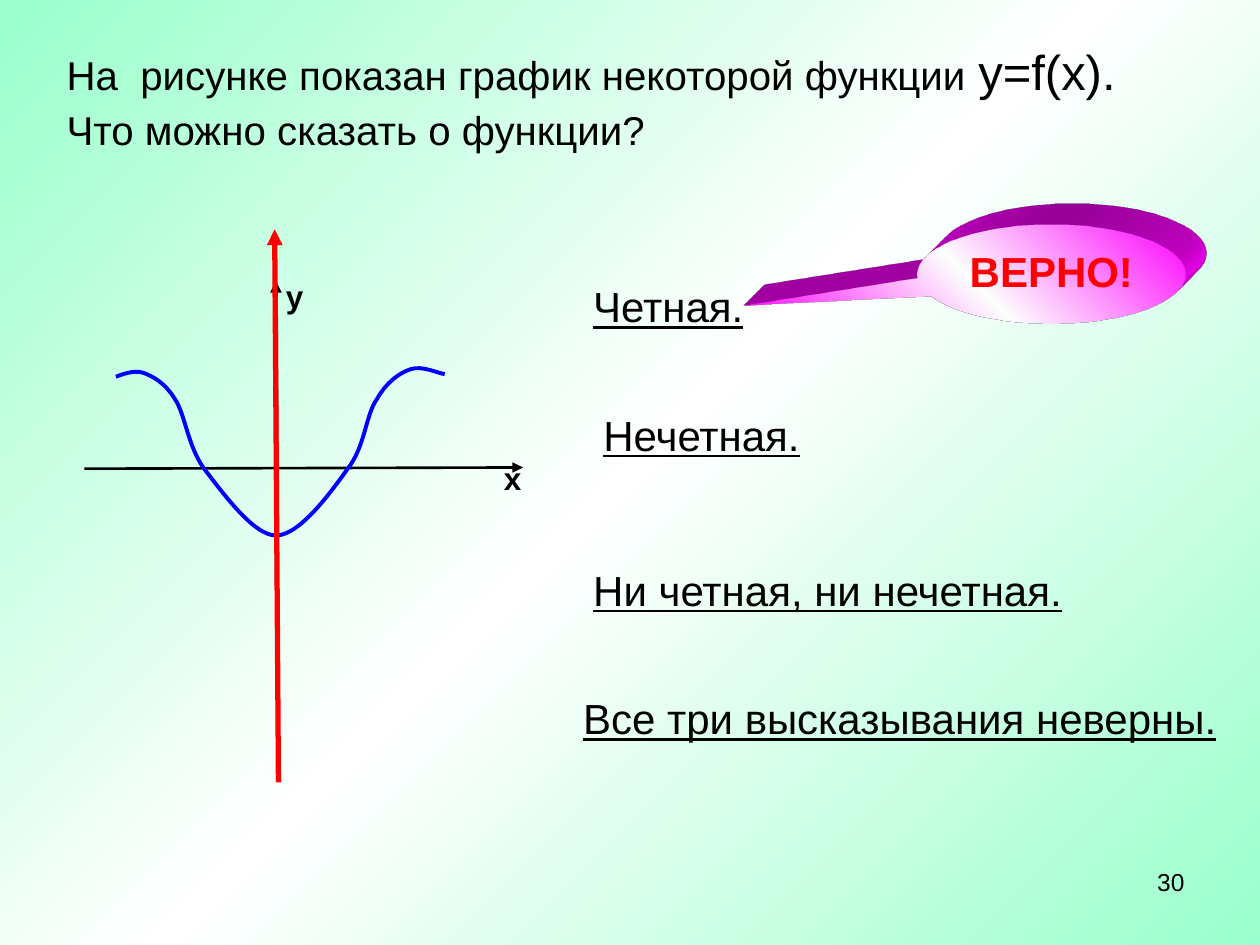
"""Build a quiz slide about an even function with its graph and four answers."""
from lxml import etree
from pptx import Presentation
from pptx.dml.color import RGBColor
from pptx.enum.shapes import MSO_CONNECTOR as Connector, MSO_SHAPE as Shape
from pptx.enum.text import MSO_ANCHOR as Anchor, MSO_AUTO_SIZE as AutoSize, PP_ALIGN as Align
from pptx.oxml import parse_xml
from pptx.oxml.ns import nsdecls, qn
from pptx.util import Inches, Pt

BLACK, RED, BLUE = "000000", "FF0000", "0000FF"
MINT, MAGENTA, WHITE = "99FFCC", "FF00FF", "FFFFFF"

QUESTION = [
    [("На  рисунке показан график некоторой функции ", 23), ("y=f(x).", 28), (" ", 23)],
    [("Что можно сказать о функции? ", 23), (" ", 26)],
]
ANSWERS = [
    ("Четная.", 4.61, 2.18, 1.4),
    ("Нечетная.", 4.69, 3.2, 1.78),
    ("Ни четная, ни нечетная.", 4.61, 4.43, 3.95),
    ("Все три высказывания неверны.", 4.53, 5.45, 5.23),
]
AXIS_LABELS = [("х", 3.9, 3.59), ("у", 2.17, 2.15)]
AXES = [((0.67, 3.72), (4.15, 3.71), BLACK, 1.5), ((2.2, 5.21), (2.19, 2.23), BLACK, 2.25)]
SYMMETRY_AXIS = ((2.21, 6.21), (2.18, 1.82), RED, 3)
CURVE_START = (0.92, 2.99)
CURVE = [
    ((0.95, 2.98), (1.06, 2.93), (1.14, 2.96)),
    ((1.22, 2.99), (1.31, 3.04), (1.39, 3.17)),
    ((1.47, 3.29), (1.49, 3.54), (1.62, 3.72)),
    ((1.76, 3.9), (2.01, 4.25), (2.19, 4.25)),
    ((2.38, 4.25), (2.63, 3.9), (2.76, 3.72)),
    ((2.9, 3.54), (2.9, 3.3), (2.99, 3.17)),
    ((3.07, 3.03), (3.17, 2.96), (3.26, 2.93)),
    ((3.35, 2.9), (3.47, 2.96), (3.53, 2.97)),
]


def color(value):
    return RGBColor.from_string(value)


def set_gradient(fill, properties, edge, angle):
    fill.solid()
    stops = "".join(
        f'<a:gs pos="{position * 1000}"><a:srgbClr val="{value}"/></a:gs>'
        for position, value in ((0, edge), (50, WHITE), (100, edge))
    )
    gradient = parse_xml(
        f'<a:gradFill {nsdecls("a")} rotWithShape="1"><a:gsLst>{stops}</a:gsLst>'
        f'<a:lin ang="{angle * 60000}" scaled="1"/></a:gradFill>'
    )
    properties.replace(properties.find(qn("a:solidFill")), gradient)


def add_run(paragraph, text, size, value=BLACK, bold=False, underline=False):
    run = paragraph.add_run()
    run.text = text
    font = run.font
    font.name, font.size, font.bold, font.underline = "Arial", Pt(size), bold, underline
    font.color.rgb = color(value)


def add_text(slide, box, paragraphs, wrap=False, align=Align.LEFT, **style):
    frame = slide.shapes.add_textbox(*map(Inches, box)).text_frame
    frame.word_wrap = wrap
    frame.auto_size = AutoSize.NONE if align == Align.RIGHT else AutoSize.SHAPE_TO_FIT_TEXT
    for index, runs in enumerate(paragraphs):
        paragraph = frame.add_paragraph() if index else frame.paragraphs[0]
        paragraph.alignment = align
        for text, size in runs:
            add_run(paragraph, text, size, **style)


def add_arrow(slide, start, end, value, width):
    arrow = slide.shapes.add_connector(Connector.STRAIGHT, *map(Inches, start + end))
    arrow.line.color.rgb = color(value)
    arrow.line.width = Pt(width)
    etree.SubElement(arrow.line._get_or_add_ln(), qn("a:tailEnd"), type="triangle")
    etree.SubElement(arrow._element.spPr, qn("a:effectLst"))


def add_curve(slide):
    builder = slide.shapes.build_freeform(*map(Inches, CURVE_START))
    points = [tuple(map(Inches, point)) for segment in CURVE for point in segment]
    builder.add_line_segments(points, close=False)
    curve = builder.convert_to_shape()
    outline = next(curve._element.iter(qn("a:path")))
    lines = outline.findall(qn("a:lnTo"))
    for first in range(0, len(lines), 3):
        bezier = etree.SubElement(outline, qn("a:cubicBezTo"))
        for line in lines[first:first + 3]:
            bezier.append(line[0])
            outline.remove(line)
    curve.fill.background()
    curve.line.color.rgb = color(BLUE)
    curve.line.width = Pt(2.25)
    curve.shadow.inherit = False


def add_callout(slide):
    box = map(Inches, (7.28, 1.78, 2.13, 0.79))
    callout = slide.shapes.add_shape(Shape.OVAL_CALLOUT, *box)
    callout.adjustments[0], callout.adjustments[1] = -1.147, 0.314
    properties = callout._element.spPr
    set_gradient(callout.fill, properties, MAGENTA, 315)
    callout.line.fill.background()
    callout.shadow.inherit = False
    properties.append(parse_xml(
        f'<a:scene3d {nsdecls("a")}><a:camera prst="legacyObliqueTopRight"/>'
        '<a:lightRig rig="legacyFlat3" dir="b"/></a:scene3d>'
    ))
    properties.append(parse_xml(
        f'<a:sp3d {nsdecls("a")} extrusionH="430200" prstMaterial="legacyMatte">'
        '<a:bevelT w="13500" h="13500" prst="angle"/><a:bevelB w="13500" h="13500" prst="angle"/>'
        f'<a:extrusionClr><a:srgbClr val="{MAGENTA}"/></a:extrusionClr></a:sp3d>'
    ))
    frame = callout.text_frame
    frame.word_wrap = True
    frame.vertical_anchor = Anchor.TOP
    frame.paragraphs[0].alignment = Align.CENTER
    add_run(frame.paragraphs[0], "ВЕРНО!", 24, RED, bold=True)


def main():
    presentation = Presentation()
    presentation.slide_width, presentation.slide_height = Inches(10), Inches(7.5)
    slide = presentation.slides.add_slide(presentation.slide_layouts[6])
    background = slide.background.fill
    background.solid()
    set_gradient(background, next(slide._element.iter(qn("p:bgPr"))), MINT, 45)

    for axis in AXES:
        add_arrow(slide, *axis)
    for text, left, top in AXIS_LABELS:
        add_text(slide, (left, top, 0.34, 0.4), [[(text, 18)]], bold=True)
    add_text(slide, (0.43, 0.28, 9.33, 1), QUESTION, wrap=True)
    for text, left, top, width in ANSWERS:
        add_text(slide, (left, top, width, 0.5), [[(text, 24)]], underline=True)
    add_curve(slide)
    add_arrow(slide, *SYMMETRY_AXIS)
    add_callout(slide)
    add_text(slide, (7.17, 6.83, 2.33, 0.52), [[("30", 14)]], wrap=True, align=Align.RIGHT)
    presentation.save("out.pptx")


if __name__ == "__main__":
    main()
